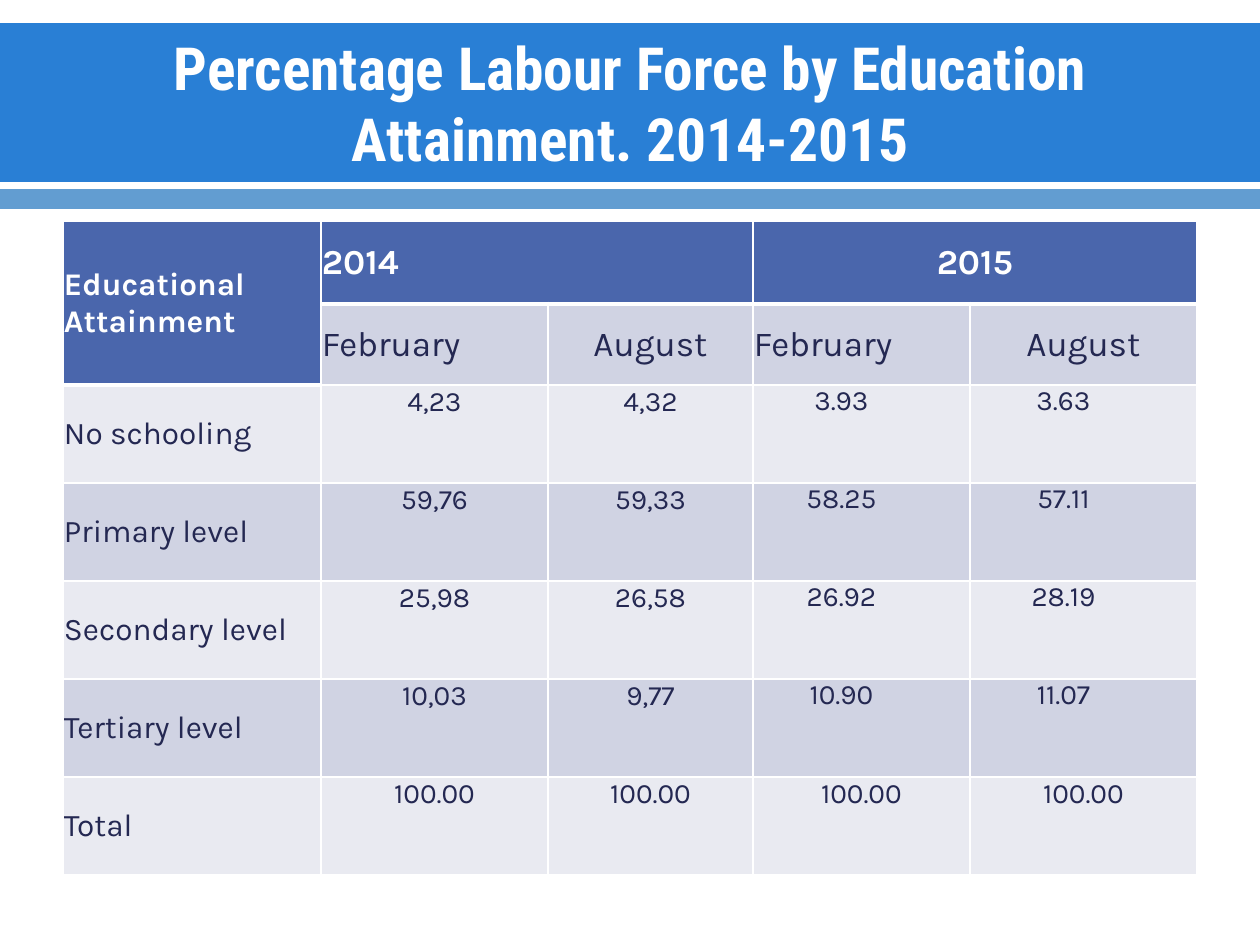
from lxml import etree
from pptx import Presentation
from pptx.dml.color import RGBColor
from pptx.enum.shapes import MSO_SHAPE
from pptx.enum.text import MSO_ANCHOR, PP_ALIGN
from pptx.oxml.ns import qn
from pptx.util import Pt

EMU_PER_PX = 914400 / 126
LEFT, CENTER = PP_ALIGN.LEFT, PP_ALIGN.CENTER
TOP, MIDDLE = MSO_ANCHOR.TOP, MSO_ANCHOR.MIDDLE
WHITE, NAVY, HEADER_BLUE = "FFFFFF", "242852", "4A66AC"
BAND_COLORS = ["E9EAF1", "D0D3E3"]


def px(*lengths):
    """Turn pixel lengths into EMU."""
    return [round(length * EMU_PER_PX) for length in lengths]


def write(frame, text, *, size, font="Karla", color=NAVY, bold=False, align=LEFT):
    paragraph = frame.paragraphs[0]
    paragraph.alignment = align
    run = paragraph.add_run()
    run.text = text
    run.font.size = Pt(size)
    run.font.name = font
    run.font.bold = bold
    run.font.color.rgb = RGBColor.from_string(color)


prs = Presentation()
prs.slide_width, prs.slide_height = px(1260, 945)
slide = prs.slides.add_slide(prs.slide_layouts[5])

# Title on its two bands
for top, height, color in [(23, 159, "297FD5"), (189, 20, "629DD1")]:
    band = slide.shapes.add_shape(MSO_SHAPE.RECTANGLE, *px(0, top, 1260, height))
    band.shadow.inherit = False
    band.fill.solid()
    band.fill.fore_color.rgb = RGBColor.from_string(color)
    band.line.fill.background()

title = slide.shapes.title
title.left, title.top, title.width, title.height = px(63, 25, 1134, 154)
title.text_frame.word_wrap = True
title.text_frame.vertical_anchor = MIDDLE
write(title.text_frame, "Percentage Labour Force by Education Attainment. 2014-2015",
      size=34, font="Roboto Condensed", color=WHITE, bold=True, align=CENTER)
slide.shapes.element.append(title.element)  # bring in front of the bands

# Labour force table
rows = [
    ["Educational Attainment", "2014", "", "2015", ""],
    ["", "February", "August", "February", "August"],
    ["No schooling", "4,23", "4,32", "3.93", "3.63"],
    ["Primary level", "59,76", "59,33", "58.25", "57.11"],
    ["Secondary level", "25,98", "26,58", "26.92", "28.19"],
    ["Tertiary level", "10,03", "9,77", "10.90", "11.07"],
    ["Total", "100.00", "100.00", "100.00", "100.00"],
]
column_widths = [258, 227, 205, 217, 227]
row_heights = [83, 81] + [98] * 5
table = slide.shapes.add_table(
    len(rows), len(column_widths),
    *px(63, 221, sum(column_widths), sum(row_heights))).table
for column, width in zip(table.columns, px(*column_widths)):
    column.width = width
for row, height in zip(table.rows, px(*row_heights)):
    row.height = height

for r, texts in enumerate(rows):
    for c, text in enumerate(texts):
        cell = table.cell(r, c)
        is_header = r == 0 or (r == 1 and c == 0)
        is_value = r > 1 and c > 0
        is_2015_level = is_value and c > 2 and r < len(rows) - 1

        thick_top = r == 1 or (r == 2 and c == 0)
        borders = {"a:lnL": 1, "a:lnR": 1, "a:lnT": 3 if thick_top else 1,
                   "a:lnB": 3 if is_header else 1}
        properties = cell._tc.get_or_add_tcPr()
        for tag, points in borders.items():
            edge = etree.SubElement(properties, qn(tag), w=str(Pt(points)))
            fill = etree.SubElement(edge, qn("a:solidFill"))
            etree.SubElement(fill, qn("a:srgbClr"), val=WHITE)

        cell.fill.solid()
        cell.fill.fore_color.rgb = RGBColor.from_string(
            HEADER_BLUE if is_header else BAND_COLORS[r % 2])
        cell.vertical_anchor = TOP if is_value else MIDDLE
        (cell.margin_left, cell.margin_top, cell.margin_right,
         cell.margin_bottom) = px(9, 0, 49, 0) if is_2015_level else px(1, 1, 1, 0)

        if text:
            centered = is_value or text in ("August", "2015")
            size = 16 if is_value else 18 if c == 0 else 20
            write(cell.text_frame, text, size=size, bold=is_header,
                  color=WHITE if is_header else NAVY,
                  align=CENTER if centered else LEFT)

for first, last in [((0, 0), (1, 0)), ((0, 1), (0, 2)), ((0, 3), (0, 4))]:
    table.cell(*first).merge(table.cell(*last))

prs.save("out.pptx")
